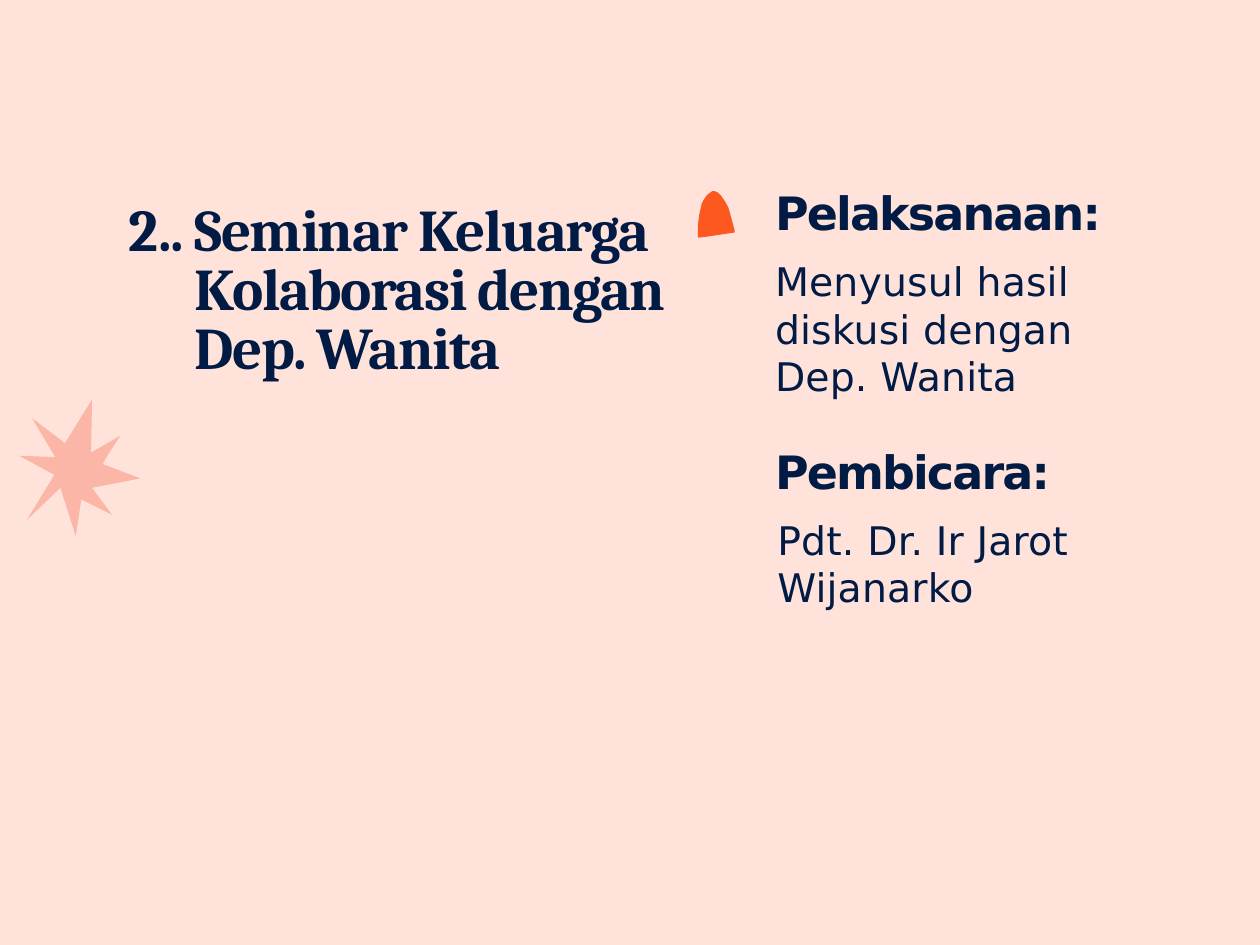
"""Build the seminar slide with its speaker and schedule details."""
from pptx import Presentation
from pptx.dml.color import RGBColor as RGB
from pptx.enum.text import MSO_ANCHOR as Anchor, MSO_AUTO_SIZE as Fit, PP_ALIGN as Align
from pptx.util import Cm, Pt

COLORS = {"back": "FFE3DB", "navy": "011B44", "pink": "FBB6A7", "orange": "FE5821"}

STAR = [(1.98, 8.59), (1.96, 9.73), (2.59, 9.37), (2.29, 9.83), (2.21, 9.98),
        (3.02, 10.29), (1.98, 10.49), (2.41, 11.07), (1.75, 10.74), (1.63, 11.53),
        (1.3, 10.49), (0.58, 11.18), (1.17, 10.21), (0.41, 9.8), (1.19, 9.83),
        (0.69, 8.99), (1.4, 9.53)]
DROP = [(15.01, 5.11), (15.01, 4.85), (15.04, 4.62), (15.09, 4.39), (15.14, 4.29),
        (15.21, 4.19), (15.32, 4.11), (15.37, 4.11), (15.44, 4.14), (15.52, 4.22),
        (15.6, 4.34), (15.67, 4.47), (15.72, 4.65), (15.8, 4.95), (15.8, 5),
        (15.47, 5.05), (15.14, 5.1)]


class Deck:
    """Holds the style and the current slide."""

    def __init__(self, prs):
        self.s = prs.slides.add_slide(prs.slide_layouts[5])
        fill = self.s.background.fill
        fill.solid()
        fill.fore_color.rgb = RGB.from_string(COLORS["back"])

    def outline(self, points, color):
        pts = [(Cm(x), Cm(y)) for x, y in points]
        fb = self.s.shapes.build_freeform(*pts[0], scale=1)
        fb.add_line_segments(pts[1:], close=True)
        sp = fb.convert_to_shape()
        sp.shadow.inherit = False
        sp.fill.solid()
        sp.fill.fore_color.rgb = RGB.from_string(COLORS[color])
        sp.line.fill.background()

    def text(self, box, runs, size, bold=False, font="DejaVu Sans", top=0.03,
             before=1, margin=0.03, indent=0, leading=None, sp=None):
        box = [Cm(v) for v in box]
        if sp is None:
            sp = self.s.shapes.add_textbox(*box)
        sp.left, sp.top, sp.width, sp.height = box
        tf = sp.text_frame
        tf.word_wrap = True
        tf.auto_size = Fit.SHAPE_TO_FIT_TEXT
        tf.vertical_anchor = Anchor.TOP
        tf.margin_left = tf.margin_right = tf.margin_bottom = 0
        tf.margin_top = Cm(top)
        p = tf.paragraphs[0]
        p.alignment = Align.LEFT
        p.space_before = Pt(before)
        if leading:
            p.line_spacing = Pt(leading)
        pPr = p._p.get_or_add_pPr()
        pPr.set("marL", str(Cm(margin)))
        pPr.set("indent", str(Cm(indent)))
        for words, spacing in runs:
            r = p.add_run()
            r.text = words
            r.font.name = font
            r.font.size = Pt(size)
            r.font.bold = bold
            r.font.color.rgb = RGB.from_string(COLORS["navy"])
            r._r.get_or_add_rPr().set("spc", str(round(spacing * 100)))

    def heading(self, top, words, sp=None):
        self.text((16.64, top, 7.06, 1.24), [(words, -1.1)], 28, bold=True, sp=sp)

    def body(self, left, top, height, words):
        self.text((left, top, 8.66, height), [(words, 0.1)], 24)


def main():
    prs = Presentation()
    prs.slide_width, prs.slide_height = Cm(27.1), Cm(20.32)
    deck = Deck(prs)
    deck.heading(3.94, "Pelaksanaan:", deck.s.shapes.title)
    deck.body(16.64, 5.51, 5.23, "Menyusul hasil diskusi dengan Dep. Wanita")
    deck.outline(STAR, "pink")
    deck.outline(DROP, "orange")
    deck.text((2.74, 4.11, 11.86, 4.14),
              [("2", -7.7), (".. Seminar Keluarga Kolaborasi dengan Dep. Wanita", -0.9)],
              36, bold=True, font="Cambria", top=0.28, before=8.2,
              margin=1.45, indent=-1.42, leading=36)
    deck.heading(9.5, "Pembicara:")
    deck.body(16.69, 11.07, 2.08, "Pdt. Dr. Ir Jarot Wijanarko")
    prs.save("out.pptx")


if __name__ == "__main__":
    main()
